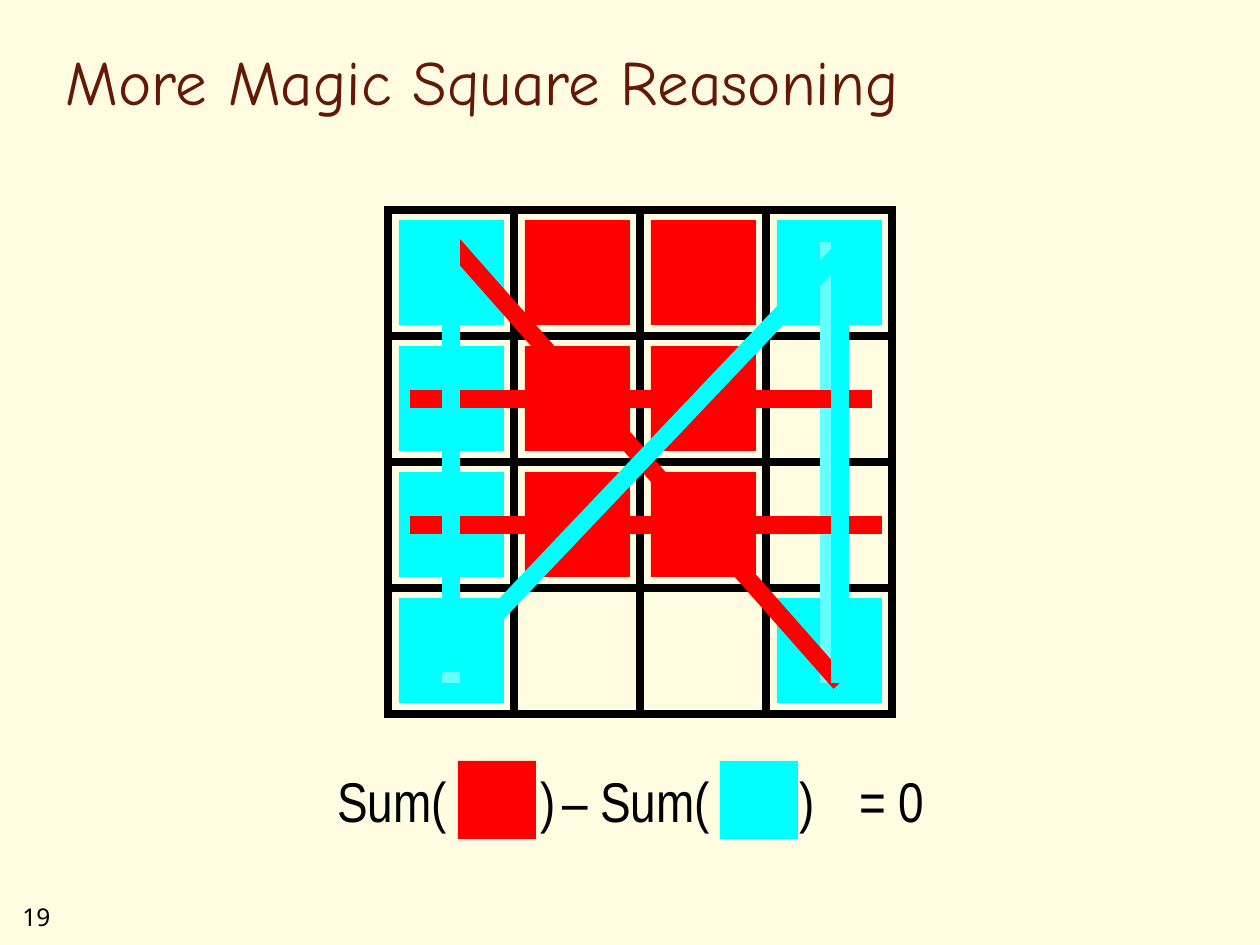
"""Build the magic square reasoning slide."""
from lxml import etree
from pptx import Presentation
from pptx.dml.color import RGBColor
from pptx.enum.shapes import MSO_CONNECTOR, MSO_SHAPE
from pptx.enum.text import MSO_ANCHOR, PP_ALIGN
from pptx.oxml.ns import qn
from pptx.util import Emu, Pt

RECT = MSO_SHAPE.RECTANGLE
STRAIGHT = MSO_CONNECTOR.STRAIGHT
TOP = MSO_ANCHOR.TOP
LEFT = PP_ALIGN.LEFT
PX_PER_INCH = 126
COLORS = {
    "paper": "FFFCE1",
    "title": "631908",
    "ink": "000000",
    "red": "FF0000",
    "cyan": "00FFFF",
    "pale": "66FFFF",
}
CELL, TILE, SWATCH = 126, 105, 78
GRID_X, GRID_Y = 388, 210
TILE_X, TILE_Y = 399, 220
FORMULA_Y = 760
TILES = ["CRRC", "CRR.", "CRR.", "C..C"]
TILE_COLORS = {"C": "cyan", "R": "red"}
STROKES = [
    (410, 399, 861, 399, "red"),
    (410, 525, 872, 525, "red"),
    (451, 683, 451, 242, "pale"),
    (829, 683, 829, 242, "pale"),
    (840, 683, 451, 242, "red"),
    (420, 399, 872, 399, "red"),
    (420, 525, 882, 525, "red"),
    (840, 683, 840, 242, "cyan"),
    (451, 662, 850, 242, "cyan"),
    (451, 672, 451, 231, "cyan"),
]
SWATCHES = [(458, "red"), (720, "cyan")]
FORMULA = [
    (325, 189, "Sum("),
    (528, 50, ")"),
    (550, 78, "–"),
    (588, 189, "Sum("),
    (787, 50, ")"),
    (847, 140, "= 0"),
]


def px(n):
    """Turn pixels into EMU."""
    return Emu(round(n * 914400 / PX_PER_INCH))


def rgb(name):
    """Look up a named colour."""
    return RGBColor.from_string(COLORS[name])


def write(tf, text, size=32, font="Arial Narrow", color="ink"):
    """Put one formatted run into a text frame."""
    tf.word_wrap = True
    tf.vertical_anchor = TOP
    p = tf.paragraphs[0]
    p.alignment = LEFT
    r = p.add_run()
    r.text = text
    r.font.size = Pt(size)
    r.font.name = font
    r.font.color.rgb = rgb(color)


class Board:
    """Hold the current slide and draw its elements in one style."""

    def __init__(self, slide):
        """Keep the slide and colour its background."""
        self.s = slide
        fill = slide.background.fill
        fill.solid()
        fill.fore_color.rgb = rgb("paper")

    def title(self, x, y, w, h, text):
        """Place and fill the title placeholder."""
        sp = self.s.shapes.title
        sp.left, sp.top, sp.width, sp.height = map(px, (x, y, w, h))
        write(sp.text_frame, text, size=36, font="Comic Neue", color="title")

    def text(self, x, y, w, h, text, **style):
        """Add a text box."""
        sp = self.s.shapes.add_textbox(*map(px, (x, y, w, h)))
        write(sp.text_frame, text, **style)

    def square(self, x, y, side, fill=None):
        """Add a filled square, or an outlined one if no fill is given."""
        sp = self.s.shapes.add_shape(RECT, *map(px, (x, y, side, side)))
        sp.shadow.inherit = False
        if fill:
            sp.fill.solid()
            sp.fill.fore_color.rgb = rgb(fill)
            sp.line.fill.background()
        else:
            sp.fill.background()
            sp.line.color.rgb = rgb("ink")
            sp.line.width = Pt(4.5)
            etree.SubElement(sp.line._get_or_add_ln(), qn("a:miter"), lim="800000")

    def stroke(self, x1, y1, x2, y2, color):
        """Add a thick straight line."""
        line = self.s.shapes.add_connector(STRAIGHT, *map(px, (x1, y1, x2, y2)))
        line.line.color.rgb = rgb(color)
        line.line.width = Pt(10)
        etree.SubElement(line._element.spPr, qn("a:effectLst"))


def main():
    """Create and save the presentation."""
    prs = Presentation()
    prs.slide_width, prs.slide_height = px(1260), px(945)
    board = Board(prs.slides.add_slide(prs.slide_layouts[5]))
    board.text(10, 896, 95, 43, "19", size=14, font="Noto Sans")
    board.title(53, 36, 1144, 152, "More Magic Square Reasoning")
    for row in range(4):
        for col in range(4):
            board.square(GRID_X + col * CELL, GRID_Y + row * CELL, CELL)
    for row, marks in enumerate(TILES):
        for col, mark in enumerate(marks):
            if mark in TILE_COLORS:
                board.square(TILE_X + col * CELL, TILE_Y + row * CELL, TILE,
                             TILE_COLORS[mark])
    for stroke in STROKES:
        board.stroke(*stroke)
    for x, color in SWATCHES:
        board.square(x, FORMULA_Y + 1, SWATCH, color)
    for x, width, text in FORMULA:
        board.text(x, FORMULA_Y, width, 79, text)
    prs.save("out.pptx")


if __name__ == "__main__":
    main()
